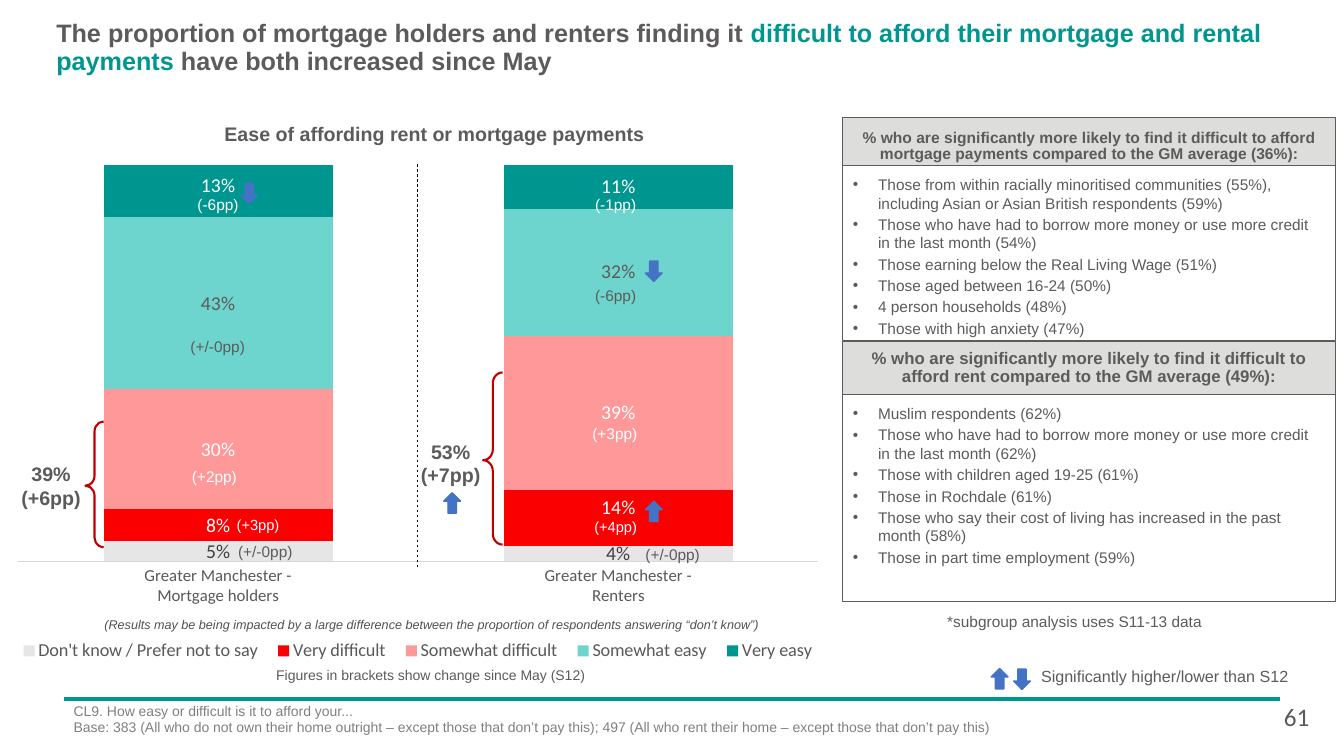
"""Build the slide on how easily mortgage holders and renters afford their payments."""
from lxml.etree import SubElement
from pptx import Presentation
from pptx.chart.data import CategoryChartData
from pptx.dml.color import RGBColor
from pptx.enum.chart import XL_CHART_TYPE, XL_LABEL_POSITION, XL_LEGEND_POSITION, XL_TICK_MARK
from pptx.enum.dml import MSO_LINE
from pptx.enum.shapes import MSO_CONNECTOR, MSO_SHAPE
from pptx.enum.text import MSO_ANCHOR, MSO_AUTO_SIZE, PP_ALIGN
from pptx.oxml import parse_xml
from pptx.oxml.ns import nsdecls, qn
from pptx.util import Pt

COLORS = {
    "text": "5C5B5A", "teal": "009690", "aqua": "6DD5CE", "pink": "FF9999", "red": "FA0000",
    "pale": "E7E6E6", "white": "FFFFFF", "black": "000000", "brace": "C00000", "arrow": "4472C4",
    "header": "DDDDDC", "axis": "D9D9D9", "axis_text": "595959", "label": "404040",
    "note": "515151", "base": "808080",
}
RGB = {name: RGBColor.from_string(value) for name, value in COLORS.items()}


def style_font(font, size, color, **values):
    """Apply size, colour and further attributes to a font."""
    for name, value in {"name": "Arial", "size": Pt(size), **values}.items():
        setattr(font, name, value)
    font.color.rgb = RGB[color]


def write(frame, lines, size, color, margins=(7.2, 3.6, 7.2, 3.6), wrap=True,
          anchor=MSO_ANCHOR.TOP, align=PP_ALIGN.LEFT, spacing=1.0, after=0, bullet=False, **font):
    """Fill a text frame with one paragraph per line."""
    left, top, right, bottom = (Pt(margin) for margin in margins)
    layout = {"margin_left": left, "margin_top": top, "margin_right": right, "margin_bottom": bottom,
              "auto_size": MSO_AUTO_SIZE.NONE, "word_wrap": wrap, "vertical_anchor": anchor}
    for name, value in layout.items():
        setattr(frame, name, value)
    frame.text = "\n".join(lines)
    for paragraph in frame.paragraphs:
        flow = {"alignment": align, "line_spacing": spacing, "space_before": Pt(0), "space_after": Pt(after)}
        for name, value in flow.items():
            setattr(paragraph, name, value)
        if bullet:
            properties = paragraph._p.get_or_add_pPr()
            properties.set("marL", str(Pt(18)))
            properties.set("indent", str(-Pt(18)))
            SubElement(properties, qn("a:buFont")).set("typeface", "Arial")
            SubElement(properties, qn("a:buChar")).set("char", "•")
        for run in paragraph.runs:
            style_font(run.font, size, color, **font)


deck = Presentation()
deck.slide_width, deck.slide_height = Pt(960), Pt(540)
slide = deck.slides.add_slide(deck.slide_layouts[3])
shapes = slide.shapes
title, mortgage_list, rent_list = slide.placeholders

title.left, title.top, title.width, title.height = Pt(33), Pt(11.5), Pt(896), Pt(63)
write(title.text_frame, [""], 18, "text", spacing=0.9)
for words, color in [("The proportion of mortgage holders and renters finding it ", "text"),
                     ("difficult to afford their mortgage and rental payments ", "teal"),
                     ("have both increased since May", "text")]:
    run = title.text_frame.paragraphs[0].add_run()
    run.text = words
    style_font(run.font, 18, color, bold=True)

affordability = CategoryChartData(number_format="0%")
affordability.categories = ["Greater Manchester -\nMortgage holders", "Greater Manchester -\nRenters"]
answers = [
    ("Don't know / Prefer not to say", (0.05, 0.04), "pale", "label"),
    ("Very difficult", (0.08, 0.14), "red", "white"),
    ("Somewhat difficult", (0.30, 0.39), "pink", "white"),
    ("Somewhat easy", (0.43, 0.32), "aqua", "text"),
    ("Very easy", (0.13, 0.11), "teal", "white"),
]
for answer, shares, _, _ in answers:
    affordability.add_series(answer, shares)
chart = shapes.add_chart(XL_CHART_TYPE.COLUMN_STACKED_100, Pt(6.5), Pt(118), Pt(584), Pt(371),
                         affordability).chart
style_font(chart.font, 10, "black", name="Calibri")
chart.has_title = False
chart.has_legend = True
chart.legend.position = XL_LEGEND_POSITION.BOTTOM
chart.legend.include_in_layout = False
style_font(chart.legend.font, 13, "axis_text", name="Calibri")
category_axis, value_axis = chart.category_axis, chart.value_axis
category_axis.major_tick_mark = XL_TICK_MARK.NONE
category_axis.format.line.color.rgb = RGB["axis"]
category_axis.format.line.width = Pt(0.75)
style_font(category_axis.tick_labels.font, 12, "axis_text", name="Calibri")
for name, value in {"visible": False, "has_major_gridlines": False,
                    "minimum_scale": 0, "maximum_scale": 1}.items():
    setattr(value_axis, name, value)
plot = chart.plots[0]
plot.gap_width, plot.overlap, plot.vary_by_categories = 75, 100, False
for series, (_, _, fill, label) in zip(plot.series, answers):
    series.format.fill.solid()
    series.format.fill.fore_color.rgb = RGB[fill]
    labels = series.data_labels
    for name, value in {"show_value": True, "number_format": "0%", "number_format_is_linked": False,
                        "position": XL_LABEL_POSITION.CENTER}.items():
        setattr(labels, name, value)
    style_font(labels.font, 14, label, name="Calibri")

LAYOUT = "<c:layout %s><c:manualLayout>{}</c:manualLayout></c:layout>" % nsdecls("c")
FRAME = ('<c:xMode val="edge"/><c:yMode val="edge"/>'
         '<c:x val="{}"/><c:y val="{}"/><c:w val="{}"/><c:h val="{}"/>')
plot_area = chart._chartSpace.chart.plotArea
for old_layout in plot_area.findall(qn("c:layout")):
    plot_area.remove(old_layout)
inner = '<c:layoutTarget val="inner"/>' + FRAME.format(0.011, 0, 0.979, 0.763)
plot_area.insert(0, parse_xml(LAYOUT.format(inner)))
chart.legend._element.find(qn("c:legendPos")).addnext(
    parse_xml(LAYOUT.format(FRAME.format(0.0, 0.9, 1.0, 0.07))))
for series_index, point_index, shift in [(1, 1, -0.02), (4, 0, -0.01)]:
    label = plot.series[series_index].points[point_index].data_label
    style_font(label.font, 14, "white", name="Calibri")
    label.position = XL_LABEL_POSITION.CENTER
    label._dLbl.find(qn("c:idx")).addnext(
        parse_xml(LAYOUT.format(f'<c:x val="0"/><c:y val="{shift}"/>')))

centered = {"align": PP_ALIGN.CENTER, "margins": (0, 0, 0, 0)}
total = {**centered, "bold": True}
unwrapped = {"wrap": False}
texts = [
    (151, 87, 319, 17, ["Ease of affording rent or mortgage payments"], 14, "text", total),
    (6, 330, 61, 34, ["39%", "(+6pp)"], 14, "text", total),
    (296, 314, 52, 34, ["53%", "(+7pp)"], 14, "text", total),
    (134, 135.5, 44, 21, ["(-6pp)"], 11, "white", unwrapped),
    (129, 237, 53, 21, ["(+/-0pp)"], 11, "text", unwrapped),
    (130, 330, 47, 21, ["(+2pp)"], 11, "white", unwrapped),
    (162, 365, 45, 20, ["(+3pp)"], 10.5, "white", unwrapped),
    (163, 384, 53, 21, ["(+/-0pp)"], 11, "text", unwrapped),
    (418, 135.5, 44, 21, ["(-1pp)"], 11, "white", unwrapped),
    (418, 201, 44, 21, ["(-6pp)"], 11, "text", unwrapped),
    (416, 299.5, 47, 21, ["(+3pp)"], 11, "white", unwrapped),
    (417.5, 366, 45, 20, ["(+4pp)"], 10.5, "white", unwrapped),
    (454, 386, 53, 21, ["(+/-0pp)"], 11, "text", unwrapped),
    (67.5, 437, 486, 18, ["(Results may be being impacted by a large difference between the proportion of "
                          "respondents answering “don’t know”)"], 9, "note", {**unwrapped, "italic": True}),
    (183.5, 476, 248, 12, ["Figures in brackets show change since May (S12)"], 10, "text", centered),
    (669.5, 434, 217, 21, ["*subgroup analysis uses S11-13 data"], 11, "text", {}),
    (736.5, 472.5, 192, 21, ["Significantly higher/lower than S12"], 11.5, "text", unwrapped),
    (45.5, 498, 863, 40, ["CL9. How easy or difficult is it to afford your...",
                          "Base: 383 (All who do not own their home outright – except those that don’t pay this); "
                          "497 (All who rent their home – except those that don’t pay this)"], 10, "base", {}),
    (910, 497.5, 38, 29, ["61"], 18, "text", {"name": "Calibri"}),
]
for left, top, width, height, lines, size, color, options in texts:
    box = shapes.add_textbox(Pt(left), Pt(top), Pt(width), Pt(height))
    write(box.text_frame, lines, size, color, **options)

panels = [
    (mortgage_list, 84, 34, 125.5, 11.1, (7.2, 7.2, 7.2, 0),
     "% who are significantly more likely to find it difficult to afford mortgage payments "
     "compared to the GM average (36%):",
     ["Those from within racially minoritised communities (55%), including Asian or Asian British "
      "respondents (59%)",
      "Those who have had to borrow more money or use more credit in the last month (54%)",
      "Those earning below the Real Living Wage (51%)", "Those aged between 16-24 (50%)",
      "4 person households (48%)", "Those with high anxiety (47%)"]),
    (rent_list, 244, 37.5, 148, 12, (7.2, 3.6, 7.2, 3.6),
     "% who are significantly more likely to find it difficult to afford rent "
     "compared to the GM average (49%):",
     ["Muslim respondents (62%)",
      "Those who have had to borrow more money or use more credit in the last month (62%)",
      "Those with children aged 19-25 (61%)", "Those in Rochdale (61%)",
      "Those who say their cost of living has increased in the past month (58%)",
      "Those in part time employment (59%)"]),
]
for group_list, top, header_height, list_height, size, margins, heading, groups in panels:
    header = shapes.add_shape(MSO_SHAPE.RECTANGLE, Pt(602), Pt(top), Pt(352), Pt(header_height))
    header.shadow.inherit = False
    write(header.text_frame, [heading], size, "text", margins, anchor=MSO_ANCHOR.MIDDLE,
          align=PP_ALIGN.CENTER, spacing=0.9, bold=True)
    for name, value in {"left": 602, "top": top + header_height, "width": 352, "height": list_height}.items():
        setattr(group_list, name, Pt(value))
    write(group_list.text_frame, groups, 11, "text", (7.2,) * 4, after=2, bullet=True)
    for panel, fill in [(header, "header"), (group_list, "white")]:
        panel.fill.solid()
        panel.fill.fore_color.rgb = RGB[fill]
        panel.line.color.rgb = RGB["text"]
        panel.line.width = Pt(0.75)

for left, top, width, height in [(61, 301, 13, 90), (345, 266, 14, 123)]:
    brace = shapes.add_shape(MSO_SHAPE.RIGHT_BRACE, Pt(left), Pt(top), Pt(width), Pt(height))
    brace.shadow.inherit = False
    brace.rotation = 180
    brace.adjustments[0], brace.adjustments[1] = 0.55, 0.49
    brace.fill.background()
    brace.line.color.rgb = RGB["brace"]
    brace.line.width = Pt(1.5)

for left, top, rotation in [(708, 477.5, 180), (724, 478, 0), (172, 131, 0),
                            (461, 186.5, 0), (461, 358, 180), (317, 352, 180)]:
    arrow = shapes.add_shape(MSO_SHAPE.DOWN_ARROW, Pt(left), Pt(top), Pt(12), Pt(14.5))
    arrow.shadow.inherit = False
    arrow.rotation = rotation
    arrow.fill.solid()
    arrow.fill.fore_color.rgb = arrow.line.color.rgb = RGB["arrow"]
    arrow.line.width = Pt(1)

for start_x, start_y, end_x, end_y, color, width, dash in [
        (46, 499.5, 914, 499.5, "teal", 3, MSO_LINE.SOLID),
        (298, 117.5, 298, 406, "black", 0.5, MSO_LINE.DASH)]:
    rule = shapes.add_connector(MSO_CONNECTOR.STRAIGHT, Pt(start_x), Pt(start_y), Pt(end_x), Pt(end_y))
    rule.line.color.rgb = RGB[color]
    rule.line.width = Pt(width)
    rule.line.dash_style = dash
    SubElement(rule._element.spPr, qn("a:effectLst"))

deck.save("out.pptx")
